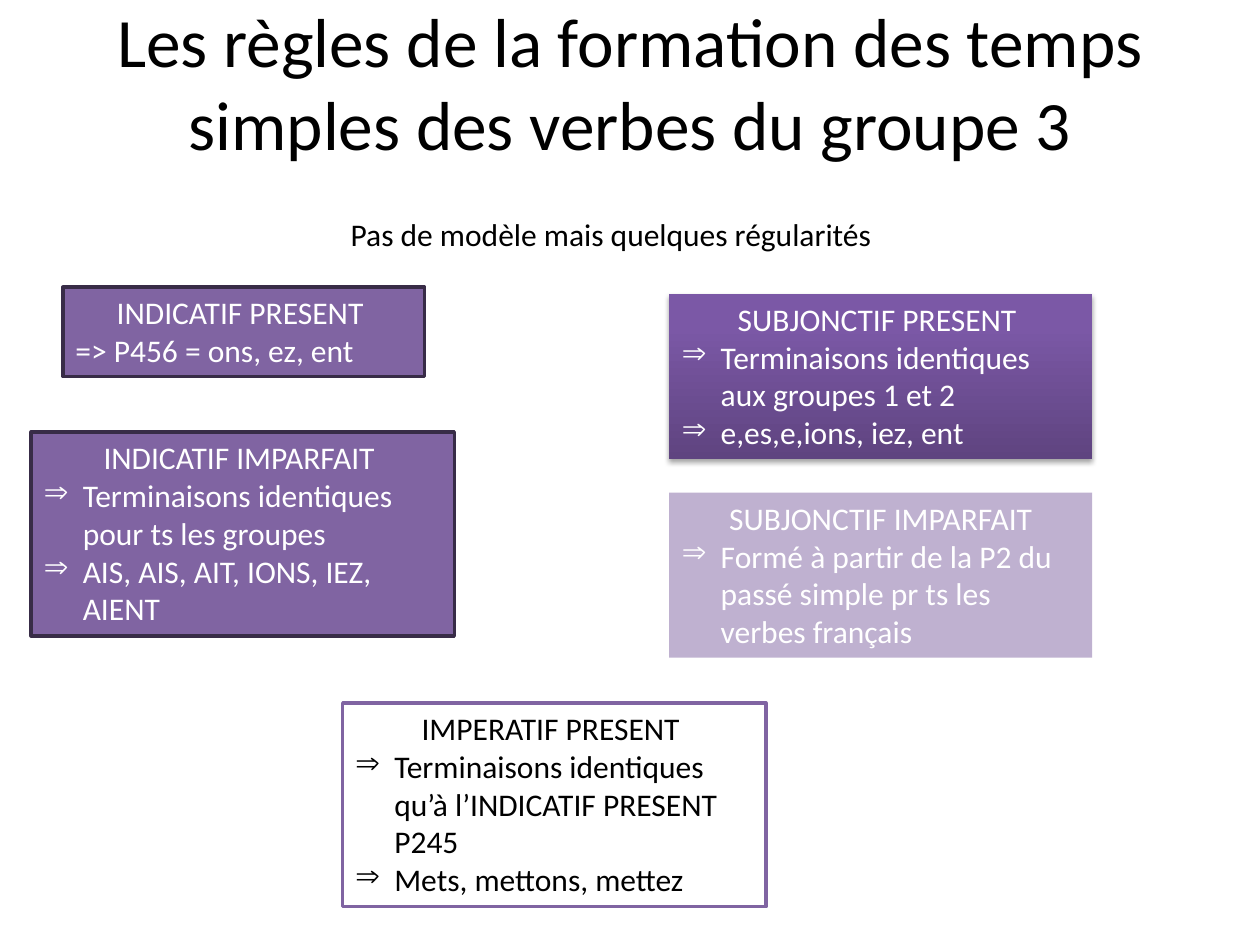
from lxml.etree import SubElement
from pptx import Presentation
from pptx.dml.color import RGBColor
from pptx.enum.shapes import MSO_SHAPE
from pptx.enum.text import MSO_ANCHOR, MSO_AUTO_SIZE, PP_ALIGN
from pptx.oxml import parse_xml
from pptx.oxml.ns import nsdecls, qn
from pptx.util import Cm, Pt

BLACK = RGBColor(0x00, 0x00, 0x00)
WHITE = RGBColor(0xFF, 0xFF, 0xFF)
PURPLE = RGBColor(0x80, 0x64, 0xA2)
PLUM = RGBColor(0x38, 0x2C, 0x47)
SHADES = ((0, RGBColor(0x5F, 0x44, 0x80)),
          (80, RGBColor(0x7B, 0x58, 0xA6)),
          (100, RGBColor(0x7C, 0x57, 0xA8)))

WIDE = 8.53
RIGHT = 13.49
INDENT = Cm(0.79)


def style(para, size, color, align):
    para.alignment = align
    for run in para.runs:
        run.font.name = "Calibri"
        run.font.size = Pt(size)
        run.font.color.rgb = color


def place(shape, left, top, width, height):
    shape.left, shape.top = Cm(left), Cm(top)
    shape.width, shape.height = Cm(width), Cm(height)


def add_title(slide, text):
    title = slide.shapes.title
    place(title, 1.27, 0.76, 22.86, 1.75)
    frame = title.text_frame
    frame.text = text
    frame.word_wrap = True
    frame.auto_size = MSO_AUTO_SIZE.NONE
    frame.vertical_anchor = MSO_ANCHOR.MIDDLE
    style(frame.paragraphs[0], 39.6, BLACK, PP_ALIGN.CENTER)


def add_intro(slide, text):
    box = slide.shapes.add_textbox(Cm(0.89), Cm(4.22), Cm(22.86), Cm(1.19))
    frame = box.text_frame
    frame.text = text
    frame.word_wrap = True
    para = frame.paragraphs[0]
    para.space_before = Pt(3.6)
    style(para, 18, BLACK, PP_ALIGN.CENTER)


def add_arrow(para):
    """Give the paragraph a hanging arrow bullet."""
    props = para._p.get_or_add_pPr()
    props.set("marL", str(INDENT))
    props.set("indent", str(-INDENT))
    SubElement(props, qn("a:buChar"), char="⇒")


def add_card(slide, spot, head, lines, ink=WHITE, fill=PURPLE, edge=None,
             arrows=True):
    card = slide.shapes.add_shape(MSO_SHAPE.RECTANGLE, *map(Cm, spot))
    card.shadow.inherit = False
    card.fill.solid()
    card.fill.fore_color.rgb = fill
    if edge is None:
        card.line.fill.background()
    else:
        card.line.color.rgb = edge
        card.line.width = Pt(2)
    frame = card.text_frame
    frame.text = "\n".join([head, *lines])
    frame.word_wrap = True
    frame.vertical_anchor = MSO_ANCHOR.TOP
    frame.auto_size = MSO_AUTO_SIZE.SHAPE_TO_FIT_TEXT
    first, *rest = frame.paragraphs
    style(first, 18, ink, PP_ALIGN.CENTER)
    for para in rest:
        style(para, 18, ink, PP_ALIGN.LEFT)
        if arrows:
            add_arrow(para)
    return card


def shade(card):
    """Swap the solid fill for a three-stop gradient that runs upwards."""
    stops = "".join(
        f'<a:gs pos="{pos * 1000}"><a:srgbClr val="{color}"/></a:gs>'
        for pos, color in SHADES)
    grad = parse_xml(
        f'<a:gradFill {nsdecls("a")}><a:gsLst>{stops}</a:gsLst>'
        '<a:lin ang="16200000" scaled="0"/></a:gradFill>')
    props = card._element.spPr
    props.replace(props.find(qn("a:solidFill")), grad)


def cast(card):
    """Add a soft shadow below the card."""
    effects = card._element.spPr.find(qn("a:effectLst"))
    effects.append(parse_xml(
        f'<a:outerShdw {nsdecls("a")} blurRad="{Pt(3.1)}" dist="{Pt(1.8)}" '
        'dir="5400000" rotWithShape="0"><a:srgbClr val="000000">'
        '<a:alpha val="35000"/></a:srgbClr></a:outerShdw>'))


def fade(card, percent):
    color = card._element.spPr.find(qn("a:solidFill"))[0]
    SubElement(color, qn("a:alpha"), val=str(percent * 1000))


def main():
    deck = Presentation()
    deck.slide_width, deck.slide_height = Cm(25.4), Cm(19.05)
    slide = deck.slides.add_slide(deck.slide_layouts[5])
    add_title(slide, "Les règles de la formation des temps simples "
                     "des verbes du groupe 3")
    add_intro(slide, "Pas de modèle mais quelques régularités")

    add_card(slide, (1.27, 5.79, 7.29, 1.8), "INDICATIF PRESENT ",
             ["=> P456 = ons, ez, ent"], edge=PLUM, arrows=False)
    add_card(slide, (0.63, 8.71, WIDE, 4.11), "INDICATIF IMPARFAIT ",
             ["Terminaisons identiques pour ts les groupes",
              "AIS, AIS, AIT, IONS, IEZ, AIENT"], edge=PLUM)
    add_card(slide, (6.91, 14.17, WIDE, 4.11), "IMPERATIF PRESENT ",
             ["Terminaisons identiques qu’à l’INDICATIF PRESENT P245",
              "Mets, mettons, mettez"],
             ink=BLACK, fill=WHITE, edge=PURPLE)
    present = add_card(slide, (RIGHT, 5.92, WIDE, 3.33),
                       "SUBJONCTIF PRESENT ",
                       ["Terminaisons identiques aux groupes 1 et 2",
                        "e,es,e,ions, iez, ent"])
    shade(present)
    cast(present)
    past = add_card(slide, (RIGHT, 9.93, WIDE, 3.33), "SUBJONCTIF IMPARFAIT",
                    ["Formé à partir de la P2 du passé simple "
                     "pr ts les verbes français"])
    fade(past, 50)
    deck.save("out.pptx")


if __name__ == "__main__":
    main()
